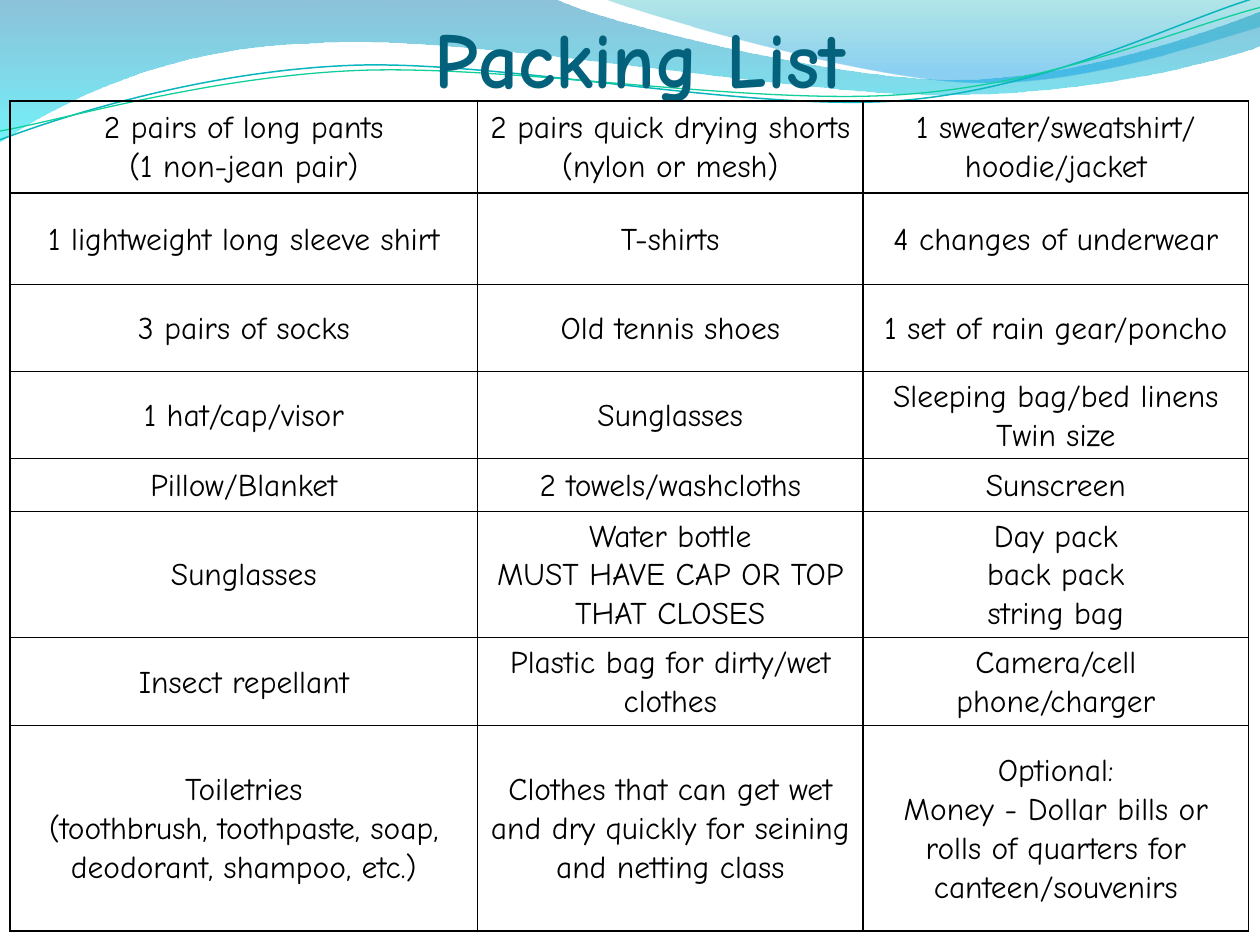
"""Build the Packing List slide: wave header, title and table of items."""
from math import cos, radians, sin
from lxml.etree import SubElement
from pptx import Presentation
from pptx.dml.color import RGBColor
from pptx.enum.text import MSO_ANCHOR, PP_ALIGN
from pptx.oxml.ns import qn
from pptx.util import Inches, Pt

FONT = "Comic Neue"
BLACK = RGBColor(0x00, 0x00, 0x00)
NAVY = RGBColor(0x04, 0x61, 0x7B)
BLUE = RGBColor(0x00, 0x79, 0xAD)
CYAN = RGBColor(0x00, 0xE9, 0xF7)
TEAL = RGBColor(0x00, 0xAB, 0xB4)
SKY = RGBColor(0x00, 0x99, 0xE4)
AQUA = RGBColor(0x09, 0xB6, 0xBE)
GREEN = RGBColor(0x10, 0xCF, 0x9B)
TILT = 2.7

deck = Presentation()
deck.slide_width, deck.slide_height = Inches(10), Inches(7.5)
slide = deck.slides.add_slide(deck.slide_layouts[5])
shapes = slide.shapes


def trace(parts, close):
    """Draw an outline; parts of one point are lines, of three are curves."""
    spots = [(Inches(x), Inches(y)) for part in parts for x, y in part]
    pen = shapes.build_freeform(*spots[0])
    pen.add_line_segments(spots[1:], close=close)
    shape = pen.convert_to_shape()
    shape.shadow.inherit = False
    lines = iter(list(shape._element.iter(qn("a:lnTo"))))
    for part in parts[1:]:
        first, *rest = [next(lines) for _ in part]
        if rest:
            first.tag = qn("a:cubicBezTo")
        for line in rest:
            first.append(line[0])
            line.getparent().remove(line)
    return shape


waves = [
    ([[(0, 0)], [(4.4, -0.01)],
      [(4.76, 0.17), (6.64, 0.63), (7.58, 0.63)],
      [(8.53, 0.63), (9.58, 0.26), (10, 0.09)], [(10.01, 0.36)],
      [(9.83, 0.44), (8.7, 0.76), (7.46, 0.75)],
      [(6.22, 0.75), (3.82, 0.28), (2.57, 0.34)],
      [(1.29, 0.36), (0.46, 0.83), (-0.01, 1.13)], [(0, 0)]],
     [(0, BLUE, 45), (1, CYAN, 55)]),
    ([[(4.79, -0.01)],
      [(5.09, 0.11), (6.82, 0.62), (7.69, 0.65)],
      [(8.56, 0.69), (9.61, 0.32), (10, 0.21)], [(10, 0)], [(4.79, -0.01)]],
     [(0, TEAL, 30), (0.8, SKY, 45)]),
]
for parts, stops in waves:
    wave = trace(parts, True)
    wave.line.fill.background()
    wave.fill.gradient()
    wave.fill.gradient_angle = 270
    for stop, (place, color, _) in zip(wave.fill.gradient_stops, stops):
        stop.position = place
        stop.color.rgb = color
    tints = wave._element.spPr.iter(qn("a:srgbClr"))
    for tint, (_, _, share) in zip(tints, stops):
        SubElement(tint, qn("a:alpha"), val=str(share * 1000))

threads = [
    ([[(0, 1.11)], [(0.48, 0.93), (1.58, 0.57), (2.77, 0.52)],
      [(3.95, 0.47), (5.93, 0.89), (7.13, 0.8)],
      [(8.33, 0.71), (9.38, 0.15), (9.98, -0.02)]], 0.58, AQUA, 0.85),
    ([[(0, 1.04)], [(0.47, 0.96), (1.64, 0.61), (2.83, 0.56)],
      [(4.03, 0.51), (5.97, 0.84), (7.17, 0.75)],
      [(8.36, 0.67), (9.41, 0.21), (10, 0.06)]], 0.59, GREEN, 0.75),
]
c, s = cos(radians(TILT)), sin(radians(TILT))
for parts, mid, color, width in threads:
    level = [[(5 + (x - 5) * c - (y - mid) * s, mid + (x - 5) * s + (y - mid) * c)
              for x, y in part] for part in parts]
    thread = trace(level, False)
    thread.rotation = 360 - TILT
    thread.fill.background()
    thread.line.color.rgb = color
    thread.line.width = Pt(width)


def style(para, size, color, bold):
    """Centre a paragraph and set the font of its runs."""
    para.alignment = PP_ALIGN.CENTER
    for run in para.runs:
        run.font.name, run.font.size, run.font.bold = FONT, Pt(size), bold
        run.font.color.rgb = color


title = shapes.title
shapes._spTree.append(title._element)
title.left, title.top = Inches(0.58), Inches(0.08)
title.width, title.height = Inches(9), Inches(0.75)
frame = title.text_frame
frame.text = "Packing List"
frame.vertical_anchor = MSO_ANCHOR.BOTTOM
frame.margin_left = frame.margin_right = frame.margin_bottom = 0
frame.margin_top = Inches(0.05)
style(frame.paragraphs[0], 45, NAVY, True)

items = [
    ["2 pairs of long pants\n(1 non-jean pair)",
     "2 pairs quick drying shorts (nylon or mesh)",
     "1 sweater/sweatshirt/\nhoodie/jacket"],
    ["1 lightweight long sleeve shirt", "T-shirts", "4 changes of underwear"],
    ["3 pairs of socks", "Old tennis shoes", "1 set of rain gear/poncho"],
    ["1 hat/cap/visor", "Sunglasses", "Sleeping bag/bed linens\nTwin size"],
    ["Pillow/Blanket", "2 towels/washcloths", "Sunscreen"],
    ["Sunglasses", "Water bottle\nMUST HAVE CAP OR TOP THAT CLOSES",
     "Day pack\nback pack\nstring bag"],
    ["Insect repellant", "Plastic bag for dirty/wet clothes",
     "Camera/cell phone/charger"],
    ["Toiletries\n(toothbrush, toothpaste, soap, deodorant, shampoo, etc.)",
     "Clothes that can get wet and dry quickly for seining and netting class",
     "Optional:\nMoney - Dollar bills or rolls of quarters for canteen/souvenirs"],
]
widths = [3.71, 3.06, 3.06]
heights = [0.73, 0.73, 0.69, 0.69, 0.42, 1, 0.7, 1.63]
table = shapes.add_table(len(heights), len(widths), Inches(0.08), Inches(0.8),
                         Inches(sum(widths)), Inches(sum(heights))).table
table.first_row = table.horz_banding = False
for column, width in zip(table.columns, widths):
    column.width = Inches(width)
for row, height, texts in zip(table.rows, heights, items):
    row.height = Inches(height)
    for cell, text in zip(row.cells, texts):
        cell.text_frame.text = text
        cell.vertical_anchor = MSO_ANCHOR.MIDDLE
        cell.margin_left = cell.margin_right = Inches(0.07)
        cell.margin_top = cell.margin_bottom = Inches(0.03)
        for para in cell.text_frame.paragraphs:
            para.line_spacing = 1.07
            style(para, 18, BLACK, False)
        for side in ("lnL", "lnR", "lnT", "lnB"):
            edge = SubElement(cell._tc.tcPr, qn(f"a:{side}"), w=str(Pt(1)))
            SubElement(SubElement(edge, qn("a:solidFill")), qn("a:srgbClr"), val=str(BLACK))
        cell.fill.background()

deck.save("out.pptx")
